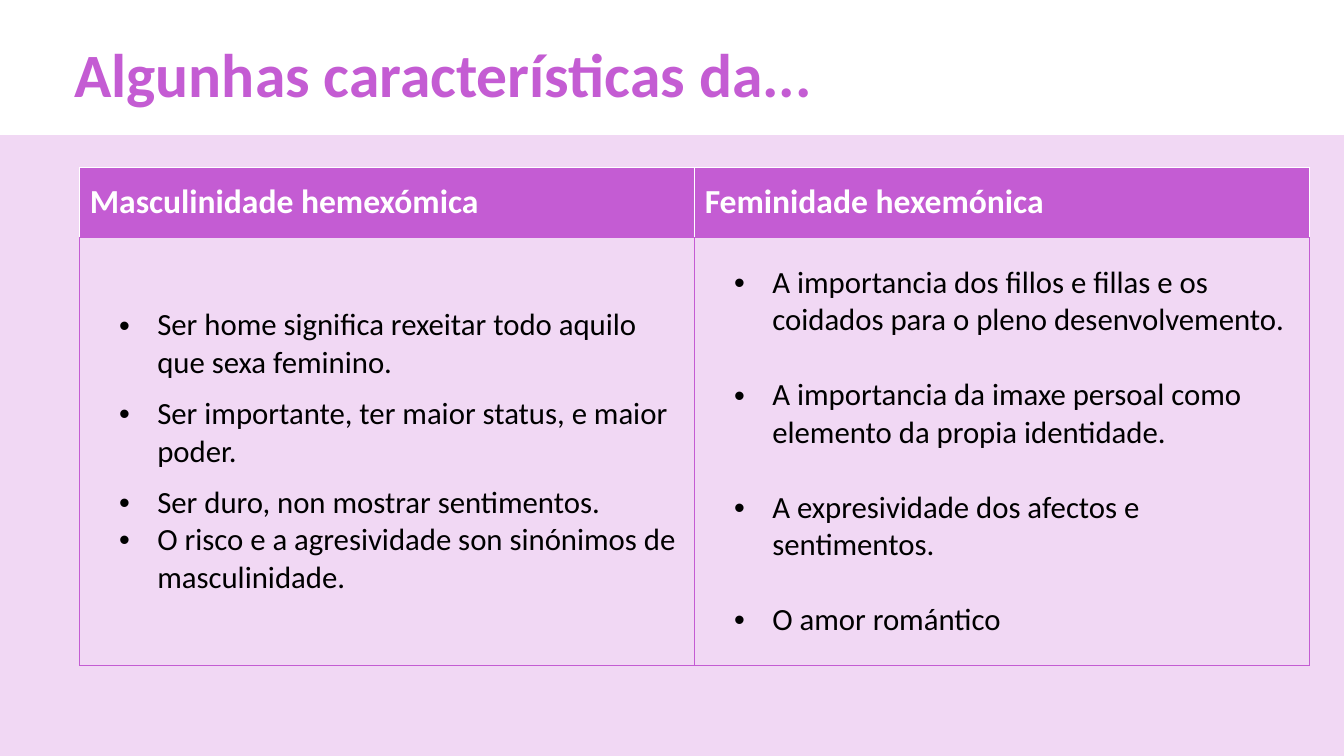
from dataclasses import dataclass

from lxml.etree import SubElement
from pptx import Presentation
from pptx.dml.color import RGBColor
from pptx.enum.shapes import MSO_SHAPE
from pptx.enum.text import MSO_ANCHOR
from pptx.oxml.ns import qn
from pptx.util import Emu, Inches, Pt

SLIDE_WIDTH, SLIDE_HEIGHT = Inches(13.33), Inches(7.5)


@dataclass(frozen=True)
class Theme:
    font: str = "Calibri"
    accent: str = "C45CD3"
    pale: str = "F1D8F4"
    white: str = "FFFFFF"
    black: str = "000000"
    title_size: int = 44
    heading_size: int = 24
    body_size: int = 22


@dataclass(frozen=True)
class Area:
    """Position and size on a grid of 100 columns and 100 rows."""
    column: float
    row: float
    columns: float
    rows: float

    def lengths(self) -> tuple[Emu, Emu, Emu, Emu]:
        return across(self.column), down(self.row), across(self.columns), down(self.rows)


@dataclass(frozen=True)
class Bullet:
    text: str
    gap: float = 0


@dataclass(frozen=True)
class Column:
    heading: str
    bullets: tuple[Bullet, ...]


THEME = Theme()
PANEL = Area(0, 17.87, 100, 82.13)
TITLE = Area(4.8, 3.47, 87.1, 11.47)
TABLE = Area(5.93, 22.13, 91.52, 65.87)
HEADER_ROWS = 9.33
SMALL_GAP, LINE_GAP = 9.8, 26.8

COLUMNS = (
    Column("Masculinidade hemexómica", (
        Bullet("Ser home significa rexeitar todo aquilo que sexa feminino.", SMALL_GAP),
        Bullet("Ser importante, ter maior status, e maior poder.", SMALL_GAP),
        Bullet("Ser duro, non mostrar sentimentos."),
        Bullet("O risco e a agresividade son sinónimos de masculinidade."),
    )),
    Column("Feminidade hexemónica", (
        Bullet("A importancia dos fillos e fillas e os coidados para o pleno desenvolvemento.",
               LINE_GAP),
        Bullet("A importancia da imaxe persoal como elemento da propia identidade.", LINE_GAP),
        Bullet("A expresividade dos afectos e sentimentos.", LINE_GAP),
        Bullet("O amor romántico"),
    )),
)


def across(columns: float) -> Emu:
    return Emu(round(SLIDE_WIDTH * columns / 100))


def down(rows: float) -> Emu:
    return Emu(round(SLIDE_HEIGHT * rows / 100))


def add_text(paragraph, text: str, size: int, color: str, bold: bool = False) -> None:
    run = paragraph.add_run()
    run.text = text
    formats = {"name": THEME.font, "size": Pt(size), "bold": bold}
    for name, value in formats.items():
        setattr(run.font, name, value)
    run.font.color.rgb = RGBColor.from_string(color)


def add_bullet(paragraph, bullet: Bullet) -> None:
    properties = paragraph._p.get_or_add_pPr()
    properties.set("marL", str(Inches(0.67)))
    properties.set("indent", str(Inches(-0.38)))
    paragraph.space_after = Pt(bullet.gap)
    SubElement(properties, qn("a:buFont"), typeface="Arial")
    SubElement(properties, qn("a:buChar"), char="•")
    add_text(paragraph, bullet.text, THEME.body_size, THEME.black)


def style_cell(cell, fill: str, borders: dict[str, str]) -> None:
    cell.vertical_anchor = MSO_ANCHOR.MIDDLE
    properties = cell._tc.get_or_add_tcPr()
    for side, color in borders.items():
        line = SubElement(properties, qn(f"a:ln{side}"), w=str(Pt(1)))
        solid = SubElement(line, qn("a:solidFill"))
        SubElement(solid, qn("a:srgbClr"), val=color)
    cell.fill.solid()
    cell.fill.fore_color.rgb = RGBColor.from_string(fill)


def draw_panel(slide) -> None:
    panel = slide.shapes.add_shape(MSO_SHAPE.RECTANGLE, *PANEL.lengths())
    panel.shadow.inherit = False
    panel.fill.solid()
    panel.fill.fore_color.rgb = RGBColor.from_string(THEME.pale)
    panel.line.fill.background()


def draw_title(slide) -> None:
    frame = slide.shapes.add_textbox(*TITLE.lengths()).text_frame
    frame.word_wrap = True
    paragraph = frame.paragraphs[0]
    for name, value in {"line_spacing": 1.07, "space_after": Pt(8)}.items():
        setattr(paragraph, name, value)
    add_text(paragraph, "Algunhas características da...", THEME.title_size, THEME.accent, True)


def draw_table(slide) -> None:
    table = slide.shapes.add_table(2, len(COLUMNS), *TABLE.lengths()).table
    table.rows[0].height = down(HEADER_ROWS)
    table.rows[1].height = down(TABLE.rows - HEADER_ROWS)
    header_borders = dict.fromkeys("LRT", THEME.white) | {"B": THEME.accent}
    body_borders = dict.fromkeys("LRTB", THEME.accent)
    for index, column in enumerate(COLUMNS):
        table.columns[index].width = across(TABLE.columns / len(COLUMNS))
        # Heading
        header = table.cell(0, index)
        style_cell(header, THEME.accent, header_borders)
        add_text(header.text_frame.paragraphs[0], column.heading,
                 THEME.heading_size, THEME.white, True)
        # Bulleted list
        body = table.cell(1, index)
        style_cell(body, THEME.pale, body_borders)
        frame = body.text_frame
        for position, bullet in enumerate(column.bullets):
            paragraph = frame.add_paragraph() if position else frame.paragraphs[0]
            add_bullet(paragraph, bullet)


def main() -> None:
    presentation = Presentation()
    presentation.slide_width, presentation.slide_height = SLIDE_WIDTH, SLIDE_HEIGHT
    slide = presentation.slides.add_slide(presentation.slide_layouts[6])
    draw_panel(slide)
    draw_title(slide)
    draw_table(slide)
    presentation.save("out.pptx")


if __name__ == "__main__":
    main()
